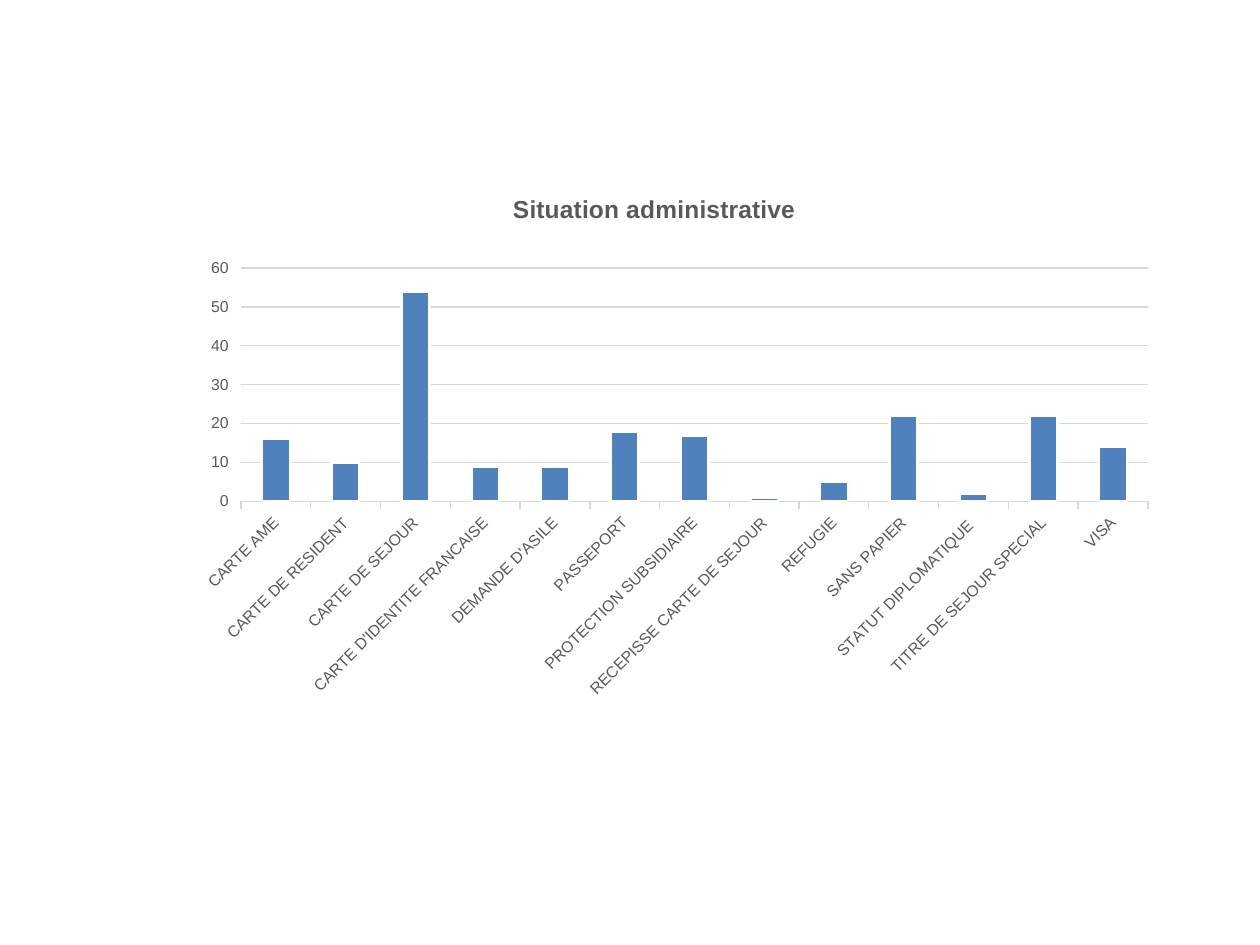
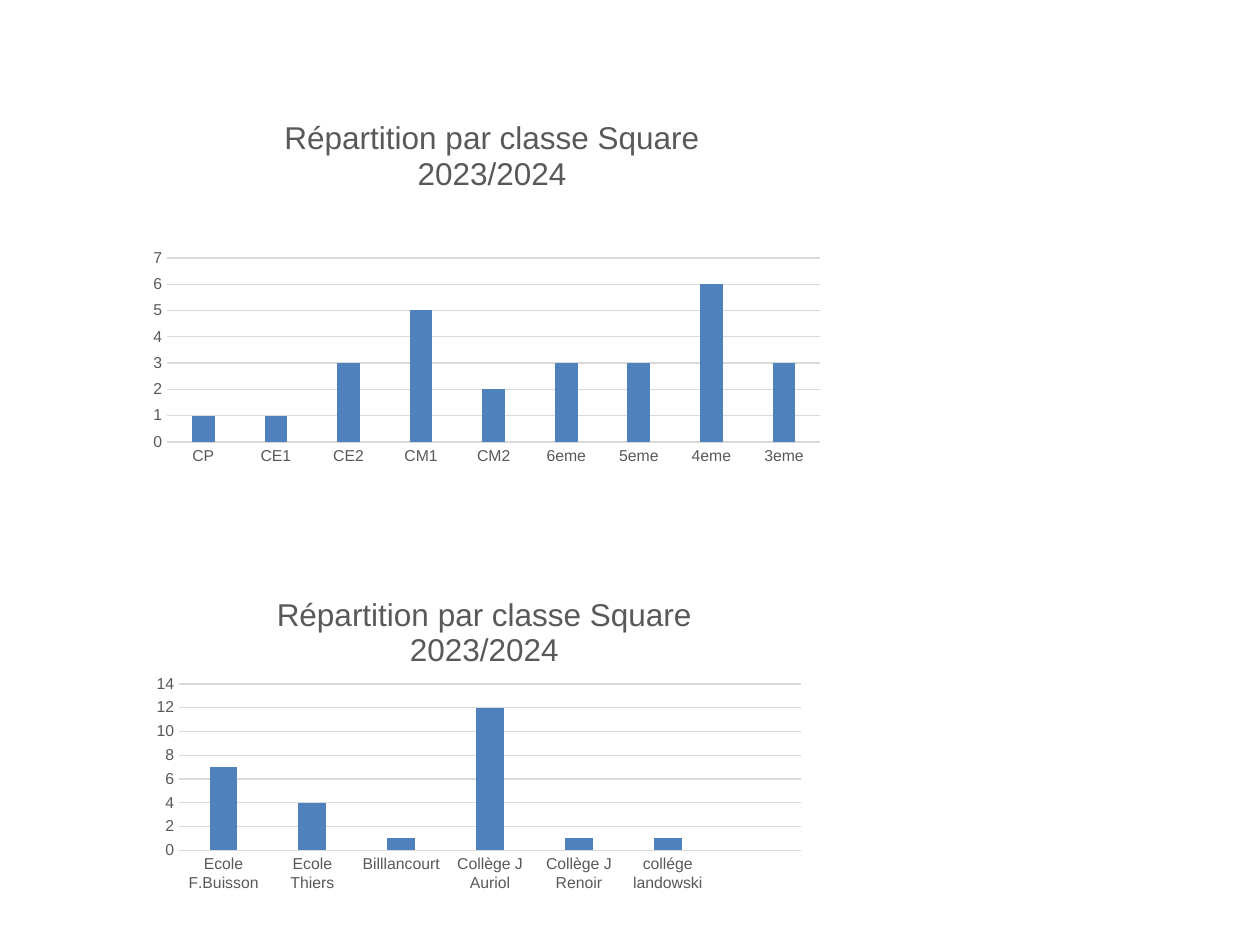
from pptx import Presentation
from pptx.chart.data import CategoryChartData
from pptx.dml.color import RGBColor
from pptx.enum.chart import XL_CHART_TYPE as ChartType, XL_TICK_MARK as Tick
from pptx.oxml import parse_xml
from pptx.oxml.ns import nsdecls, qn
from pptx.util import Pt

BLUE = RGBColor(0x4F, 0x81, 0xBD)
GREY_TEXT = RGBColor(0x59, 0x59, 0x59)
GREY_LINE = RGBColor(0xD9, 0xD9, 0xD9)
BLACK = RGBColor(0, 0, 0)
WHITE = RGBColor(0xFF, 0xFF, 0xFF)
FONT = "Arial"


def place(parent, x, y, width=None, height=None):
    """Pin a chart part at fractions of the chart area; with a size, it is the inner plot."""
    old = parent.find(qn("c:layout"))
    position = 0
    if old is not None:
        position = parent.index(old)
        parent.remove(old)
    parts = [("xMode", "edge"), ("yMode", "edge"), ("x", x), ("y", y)]
    if width:
        parts = [("layoutTarget", "inner")] + parts + [("w", width), ("h", height)]
    inside = "".join(f'<c:{tag} val="{value}"/>' for tag, value in parts)
    parent.insert(position, parse_xml(
        f'<c:layout {nsdecls("c")}><c:manualLayout>{inside}</c:manualLayout></c:layout>'))


def add_column_chart(page, title, area, title_at, plot_at, values, title_size, bold=False,
                     gap=219, overlap=-27, tick=Tick.NONE):
    data = CategoryChartData()
    data.categories = [name for name, _ in values]
    data.add_series("Series 1", [value for _, value in values])
    chart = page.shapes.add_chart(ChartType.COLUMN_CLUSTERED, *map(Pt, area), data).chart
    chart.has_legend = False
    chart.font.name, chart.font.size = FONT, Pt(10)
    chart.font.color.rgb = BLACK

    chart.has_title = True
    span = chart.chart_title.text_frame.paragraphs[0].add_run()
    span.text = title
    span.font.name, span.font.size, span.font.bold = FONT, Pt(title_size), bold
    span.font.color.rgb = GREY_TEXT
    place(chart.chart_title._element, *title_at)
    place(chart._chartSpace.chart.plotArea, *plot_at)

    for axis in (chart.category_axis, chart.value_axis):
        axis.major_tick_mark, axis.minor_tick_mark = tick, Tick.NONE
        labels = axis.tick_labels.font
        labels.name, labels.size, labels.bold = FONT, Pt(9), False
        labels.color.rgb = GREY_TEXT
    chart.value_axis.format.line.fill.background()
    chart.value_axis.has_major_gridlines = True
    for line in (chart.category_axis.format.line, chart.value_axis.major_gridlines.format.line):
        line.color.rgb, line.width = GREY_LINE, Pt(0.75)

    plot = chart.plots[0]
    plot.gap_width, plot.overlap, plot.vary_by_categories = gap, overlap, False
    series = plot.series[0]
    series.invert_if_negative = False
    series.format.fill.solid()
    series.format.fill.fore_color.rgb = BLUE
    return chart


deck = Presentation()
deck.slide_width, deck.slide_height = Pt(720), Pt(540)
blank = deck.slide_layouts[6]

# Administrative status
status_page = deck.slides.add_slide(blank)
status = [
    ("CARTE AME", 16), ("CARTE DE RESIDENT", 10), ("CARTE DE SEJOUR", 54),
    ("CARTE D'IDENTITE FRANCAISE", 9), ("DEMANDE D'ASILE", 9), ("PASSEPORT", 18),
    ("PROTECTION SUBSIDIAIRE", 17), ("RECEPISSE CARTE DE SEJOUR", 1), ("REFUGIE", 5),
    ("SANS PAPIER", 22), ("STATUT DIPLOMATIQUE ", 2), ("TITRE DE SEJOUR SPECIAL", 22),
    ("VISA", 14),
]
status_chart = add_column_chart(
    status_page, "Situation administrative", (81.4, 94.3, 581, 342.7), (0.36, 0.04),
    (0.097, 0.172, 0.892, 0.389), status, 14, bold=True, gap=150, overlap=0, tick=Tick.OUTSIDE)
status_chart.category_axis._element.txPr.bodyPr.set("rot", "-2700000")
outline = status_chart.plots[0].series[0].format.line
outline.color.rgb, outline.width = WHITE, Pt(1.5)

# Pupils by class and by school
pupils_page = deck.slides.add_slide(blank)
pupils_title = "Répartition par classe Square 2023/2024"
classes = [("CP", 1), ("CE1", 1), ("CE2", 3), ("CM1", 5), ("CM2", 2),
           ("6eme", 3), ("5eme", 3), ("4eme", 6), ("3eme", 3)]
schools = [("Ecole F.Buisson", 7), ("Ecole Thiers", 4), ("Billlancourt", 1),
           ("Collège J Auriol", 12), ("Collège J Renoir", 1), ("collége landowski", 1),
           ("", None)]
for values, area, title_at, plot_at in (
    (classes, (80, 58.3, 396.7, 211.7), (0.2, 0.025), (0.039, 0.421, 0.941, 0.497)),
    (schools, (82, 323.3, 383.8, 190.8), (0.19, 0.067), (0.053, 0.354, 0.926, 0.499)),
):
    add_column_chart(pupils_page, pupils_title, area, title_at, plot_at, values, 18)

deck.save("out.pptx")
